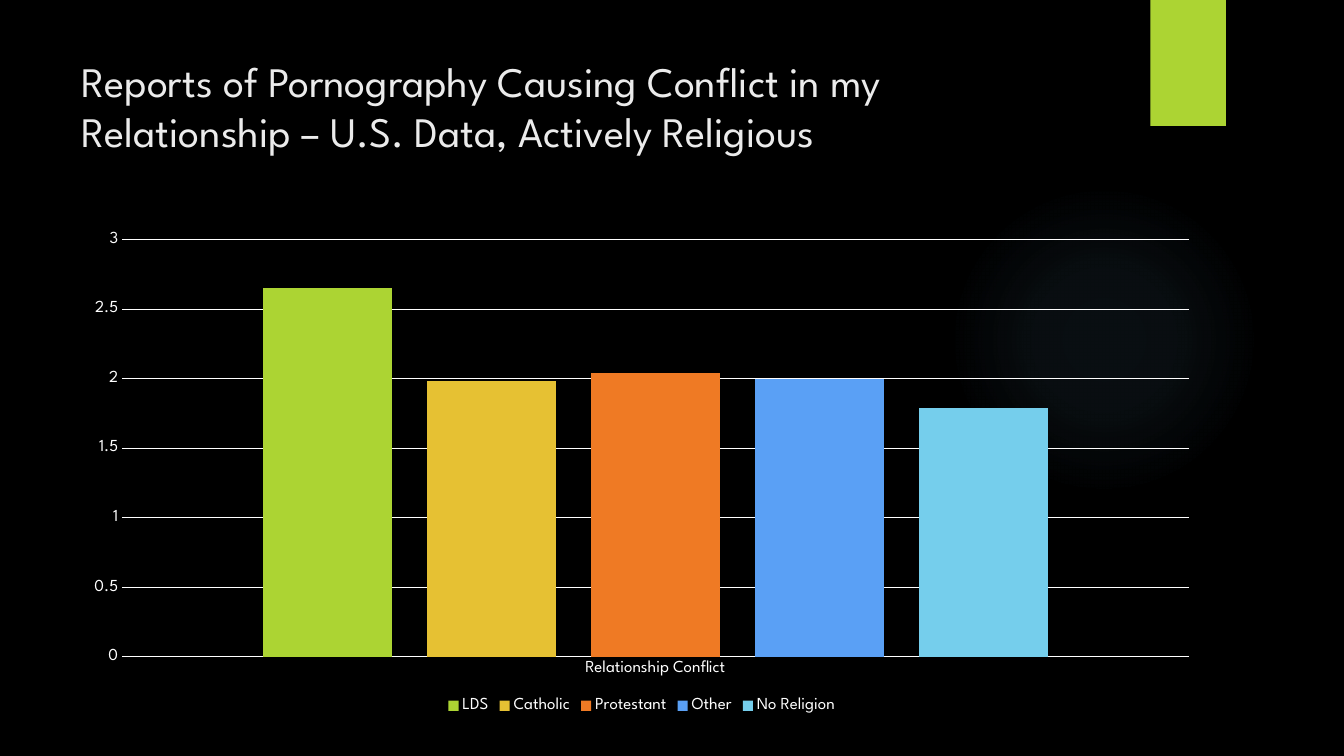
import pptx
import pptx.chart.data
import pptx.dml.color
import pptx.enum.chart
import pptx.enum.shapes
import pptx.enum.text
import pptx.oxml
import pptx.oxml.ns
import pptx.util
from dataclasses import dataclass

Inches = pptx.util.Inches
Pt = pptx.util.Pt
Shape = pptx.enum.shapes.MSO_SHAPE


@dataclass(frozen=True)
class Theme:
    font: str = "League Spartan"
    back: str = "000000"
    head: str = "EBEBEB"
    text: str = "FFFFFF"
    lime: str = "ACD433"
    glow: str = "7AC4F0"
    bars: tuple = ("ACD433", "E6C133", "EF7A24", "5AA0F5", "75CEEC")
    head_size: int = 30
    base_size: int = 10
    label_size: int = 12


def rgb(code):
    return pptx.dml.color.RGBColor.from_string(code)


class Deck:
    def __init__(self, theme):
        self.theme = theme
        self.show = pptx.Presentation()
        self.show.slide_width = Inches(13.33)
        self.show.slide_height = Inches(7.5)
        self.slide = self.show.slides.add_slide(self.show.slide_layouts[5])
        fill = self.slide.background.fill
        fill.solid()
        fill.fore_color.rgb = rgb(theme.back)

    def style(self, font, size, color):
        font.name = self.theme.font
        font.size = Pt(size)
        font.color.rgb = rgb(color)

    def shape(self, kind, box, color):
        shape = self.slide.shapes.add_shape(kind, *map(Inches, box))
        shape.shadow.inherit = False
        shape.fill.solid()
        shape.fill.fore_color.rgb = rgb(color)
        shape.line.fill.background()
        return shape

    def glow(self, box, color, stops):
        """Draw a circle whose colour fades by (position, opacity) percents."""
        shape = self.shape(Shape.OVAL, box, color)
        marks = "".join(
            f'<a:gs pos="{place * 1000}"><a:srgbClr val="{color}">'
            f'<a:alpha val="{alpha * 1000}"/></a:srgbClr></a:gs>'
            for place, alpha in stops)
        grad = pptx.oxml.parse_xml(
            f'<a:gradFill {pptx.oxml.ns.nsdecls("a")} rotWithShape="1">'
            f'<a:gsLst>{marks}</a:gsLst><a:path path="circle">'
            '<a:fillToRect l="50000" t="50000" r="50000" b="50000"/>'
            '</a:path></a:gradFill>')
        solid = shape.element.spPr.find(pptx.oxml.ns.qn("a:solidFill"))
        solid.getparent().replace(solid, grad)

    def title(self, box, text):
        title = self.slide.shapes.title
        title.left, title.top, title.width, title.height = map(Inches, box)
        frame = title.text_frame
        frame.text = text
        frame.word_wrap = True
        frame.auto_size = pptx.enum.text.MSO_AUTO_SIZE.NONE
        frame.vertical_anchor = pptx.enum.text.MSO_ANCHOR.TOP
        para = frame.paragraphs[0]
        para.alignment = pptx.enum.text.PP_ALIGN.LEFT
        self.style(para.runs[0].font, self.theme.head_size, self.theme.head)

    def chart(self, box, label, rows):
        theme = self.theme
        kinds = pptx.enum.chart
        data = pptx.chart.data.CategoryChartData()
        data.categories = [label]
        for name, value in rows:
            data.add_series(name, [value])
        chart = self.slide.shapes.add_chart(
            kinds.XL_CHART_TYPE.COLUMN_CLUSTERED, *map(Inches, box), data).chart
        self.style(chart.font, theme.base_size, theme.text)
        chart.has_title = False

        chart.has_legend = True
        chart.legend.position = kinds.XL_LEGEND_POSITION.BOTTOM
        chart.legend.include_in_layout = False
        self.style(chart.legend.font, theme.label_size, theme.text)

        plot = chart.plots[0]
        plot.vary_by_categories = False
        plot.gap_width = 219
        plot.overlap = -27
        for series, color in zip(plot.series, theme.bars):
            series.format.fill.solid()
            series.format.fill.fore_color.rgb = rgb(color)

        for axis in (chart.category_axis, chart.value_axis):
            axis.major_tick_mark = kinds.XL_TICK_MARK.NONE
            axis.minor_tick_mark = kinds.XL_TICK_MARK.NONE
            self.style(axis.tick_labels.font, theme.label_size, theme.text)
        scale = chart.value_axis
        scale.minimum_scale, scale.maximum_scale = 0, 3
        scale.major_unit = 0.5
        scale.has_major_gridlines = True
        scale.format.line.fill.background()
        for line in (chart.category_axis.format.line,
                     scale.major_gridlines.format.line):
            line.color.rgb = rgb(theme.text)
            line.width = Pt(0.75)


def main():
    theme = Theme()
    deck = Deck(theme)
    deck.glow((9.41, 1.83, 3.08, 3.08), theme.glow,
              ((0, 7), (36, 6), (69, 0), (100, 0)))
    deck.shape(Shape.RECTANGLE, (11.41, 0, 0.75, 1.25), theme.lime)
    deck.title((0.71, 0.5, 10.29, 1.53),
               "Reports of Pornography Causing Conflict in my "
               "Relationship – U.S. Data, Actively Religious")
    deck.chart((0.71, 2.2, 11.31, 4.92), "Relationship Conflict",
               (("LDS", 2.65), ("Catholic", 1.98), ("Protestant", 2.04),
                ("Other", 2), ("No Religion", 1.79)))
    deck.show.save("out.pptx")


if __name__ == "__main__":
    main()
